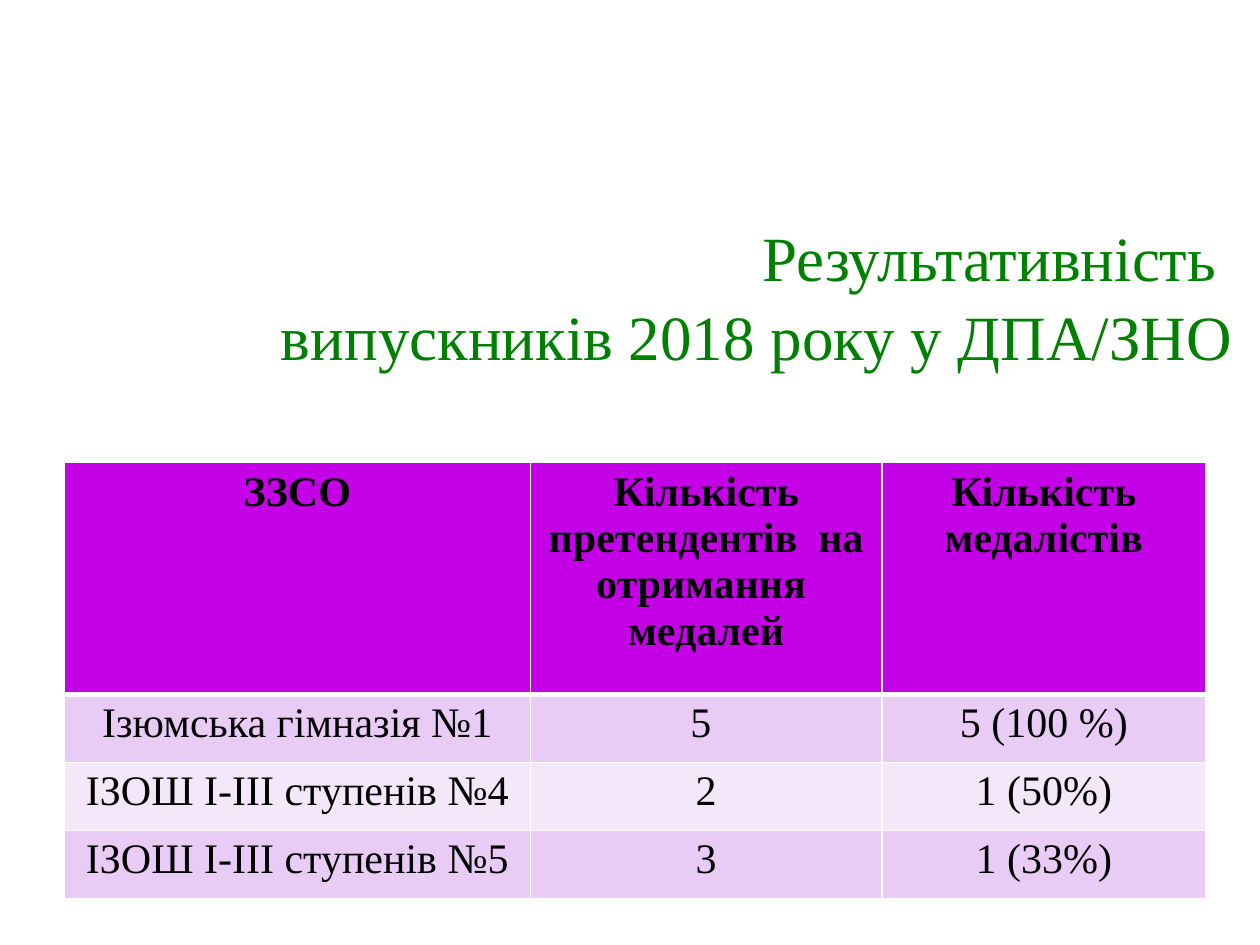
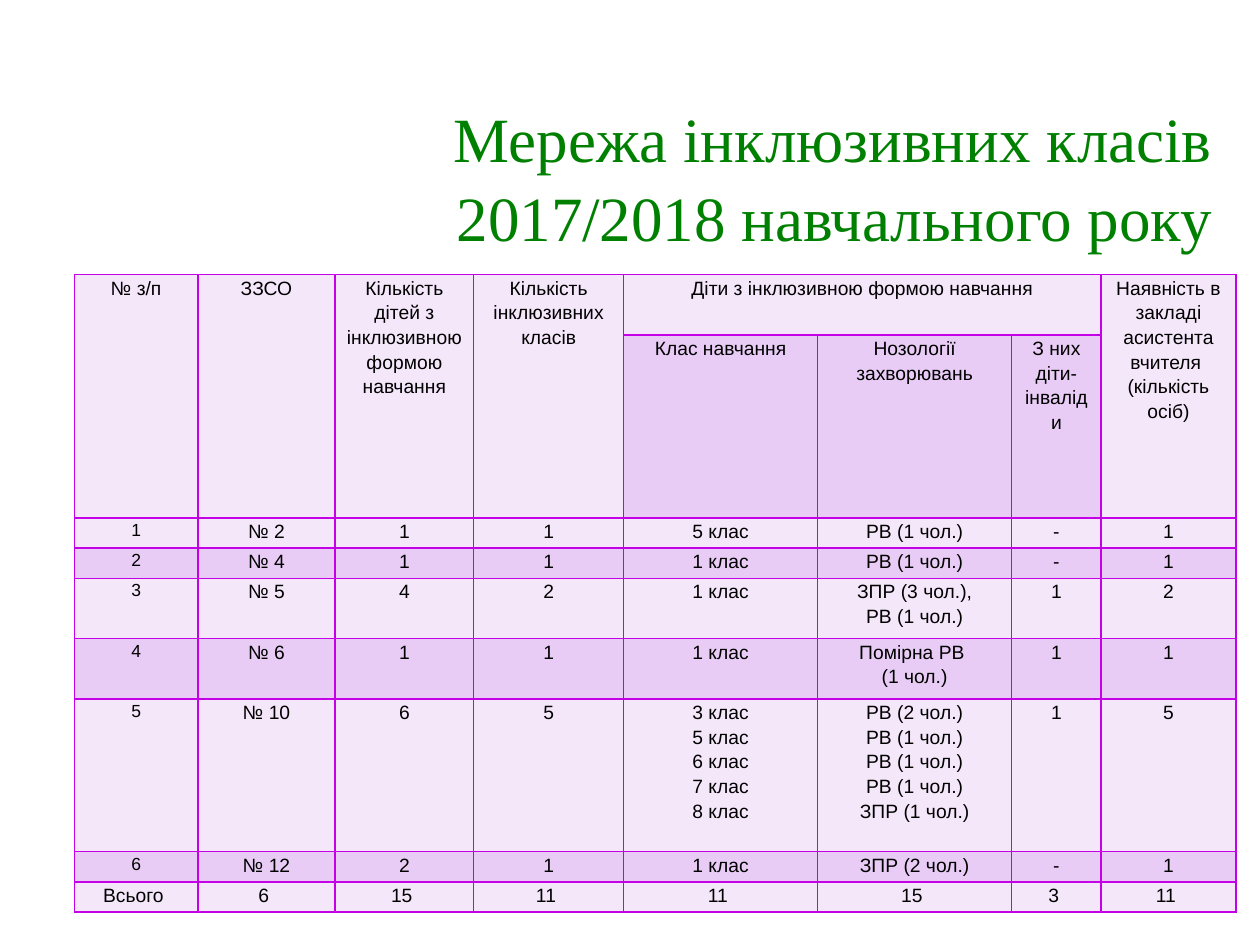
from dataclasses import dataclass

from lxml import etree
from pptx import Presentation
from pptx.dml.color import RGBColor
from pptx.enum import text
from pptx.oxml import ns
from pptx.util import Inches, Pt

SERIF, SANS = "Times New Roman", "Arial"
GREEN, PURPLE, DARK, LIGHT = "008000", "C300E6", "E9CCF5", "F5E7FA"
WHITE, BLACK = "FFFFFF", "000000"
Box = tuple[float, float, float, float]


@dataclass
class Grid:
    box: Box
    cols: list[float]
    rows: list[float]
    data: list[list[str]]
    font: str
    size: float
    line: str
    pads: tuple[float, float] = (0.1, 0.05)
    space: float | None = None
    merges: tuple[tuple[int, int, int, int], ...] = ()
    head: bool = False
    index: float | None = None  # text size of the numbers in the first column


MEDALS = Grid(
    box=(0.51, 3.67, 9.06, 3.46),
    cols=[3.7, 2.79, 2.57],
    rows=[1.84] + [0.54] * 3,
    data=[
        ["ЗЗСО", "Кількість претендентів  на отримання  медалей", "Кількість медалістів"],
        ["Ізюмська гімназія №1", "5 ", "5 (100 %)"],
        ["ІЗОШ І-ІІІ ступенів №4", "2", "1 (50%)"],
        ["ІЗОШ І-ІІІ ступенів №5", "3", "1 (33%)"],
    ],
    font=SERIF, size=24, line=WHITE, head=True,
)

CLASSES = Grid(
    box=(0.59, 2.18, 9.21, 5.07),
    cols=[0.98, 1.09, 1.1, 1.19, 1.54, 1.54, 0.71, 1.07],
    rows=[0.48, 1.45, 0.24, 0.24, 0.48, 0.48, 1.21, 0.24, 0.24],
    data=[
        ["№ з/п", "ЗЗСО", "Кількість дітей з інклюзивною формою навчання",
         "Кількість інклюзивних класів", "Діти з інклюзивною формою навчання", "", "",
         "Наявність в закладі асистента вчителя  (кількість осіб)"],
        ["", "", "", "", "Клас навчання", "Нозології захворювань", "З них діти-інваліди", ""],
        ["1", "№ 2", "1", "1", "5 клас", "РВ (1 чол.)", "-", "1"],
        ["2", "№ 4", "1", "1", "1 клас", "РВ (1 чол.)", "-", "1"],
        ["3", "№ 5", "4", "2", "1 клас", "ЗПР (3 чол.),\nРВ (1 чол.)", "1", "2"],
        ["4", "№ 6", "1", "1", "1 клас", "Помірна РВ \n(1 чол.)", "1", "1"],
        ["5", "№ 10", "6", "5", "3 клас\n5 клас\n6 клас\n7 клас\n8 клас",
         "РВ (2 чол.)\nРВ (1 чол.)\nРВ (1 чол.)\nРВ (1 чол.)\nЗПР (1 чол.)", "1", "5"],
        ["6", "№ 12", "2", "1", "1 клас", "ЗПР (2 чол.)", "-", "1"],
        ["Всього ", "6 ", "15 ", "11 ", "11 ", "15 ", "3 ", "11 "],
    ],
    font=SANS, size=11, line=PURPLE, pads=(0.07, 0), space=1.15, index=10,
    merges=tuple((0, col, 1, col) for col in (0, 1, 2, 3, 7)) + ((0, 4, 0, 6),),
)


def tint(target, color: str) -> None:
    target.rgb = RGBColor.from_string(color)


def style(para, font: str, size: float, color: str, bold: bool = False) -> None:
    for run in para.runs:
        run.font.name, run.font.size, run.font.bold = font, Pt(size), bold
        tint(run.font.color, color)


def edge(cell, side: str, color: str, width: float) -> None:
    props = cell._tc.get_or_add_tcPr()
    line = etree.SubElement(props, ns.qn(f"a:ln{side}"), w=str(Pt(width)))
    fill = etree.SubElement(line, ns.qn("a:solidFill"))
    etree.SubElement(fill, ns.qn("a:srgbClr"), val=color)


def add_title(slide, words: str, box: Box) -> None:
    title = slide.shapes.title
    title.left, title.top, title.width, title.height = map(Inches, box)
    frame = title.text_frame
    frame.text = words
    frame.word_wrap = True
    frame.auto_size = text.MSO_AUTO_SIZE.NONE
    frame.vertical_anchor = text.MSO_ANCHOR.MIDDLE
    para = frame.paragraphs[0]
    para.alignment = text.PP_ALIGN.RIGHT
    para.line_spacing = 1.05
    style(para, SERIF, 36, GREEN)


def fill_cell(cell, grid: Grid, row: int, col: int) -> None:
    words = grid.data[row][col]
    head = grid.head and row == 0
    cell.text = words
    cell.margin_left = cell.margin_right = Inches(grid.pads[0])
    cell.margin_top = cell.margin_bottom = Inches(grid.pads[1])
    size = grid.index if grid.index and col == 0 and words.isdigit() else grid.size
    for para in cell.text_frame.paragraphs:
        para.alignment = text.PP_ALIGN.CENTER
        para.line_spacing = grid.space
        style(para, grid.font, size, BLACK, head)
    for side in "LRTB":
        thick = grid.head and (row, side) in ((0, "B"), (1, "T"))
        edge(cell, side, grid.line, 3 if thick else 1)
    cell.fill.solid()
    tint(cell.fill.fore_color, PURPLE if head else DARK if row % 2 else LIGHT)


def add_grid(slide, grid: Grid) -> None:
    shape = slide.shapes.add_table(len(grid.rows), len(grid.cols), *map(Inches, grid.box))
    table = shape.table
    for col, width in zip(table.columns, grid.cols):
        col.width = Inches(width)
    for row, height in zip(table.rows, grid.rows):
        row.height = Inches(height)
    for row in range(len(grid.rows)):
        for col in range(len(grid.cols)):
            fill_cell(table.cell(row, col), grid, row, col)
    for top, left, bottom, right in grid.merges:
        table.cell(top, left).merge(table.cell(bottom, right))


def main() -> None:
    deck = Presentation()
    deck.slide_width, deck.slide_height = Inches(10), Inches(7.5)
    pages = (
        ("Результативність \vвипускників 2018 року у ДПА/ЗНО", (0.98, 1.55, 8.9, 1.57), MEDALS),
        ("Мережа інклюзивних класів 2017/2018 навчального року", (2, 0.76, 7.72, 1.26), CLASSES),
    )
    for words, box, grid in pages:
        slide = deck.slides.add_slide(deck.slide_layouts[5])
        add_title(slide, words, box)
        add_grid(slide, grid)
    deck.save("out.pptx")


if __name__ == "__main__":
    main()
